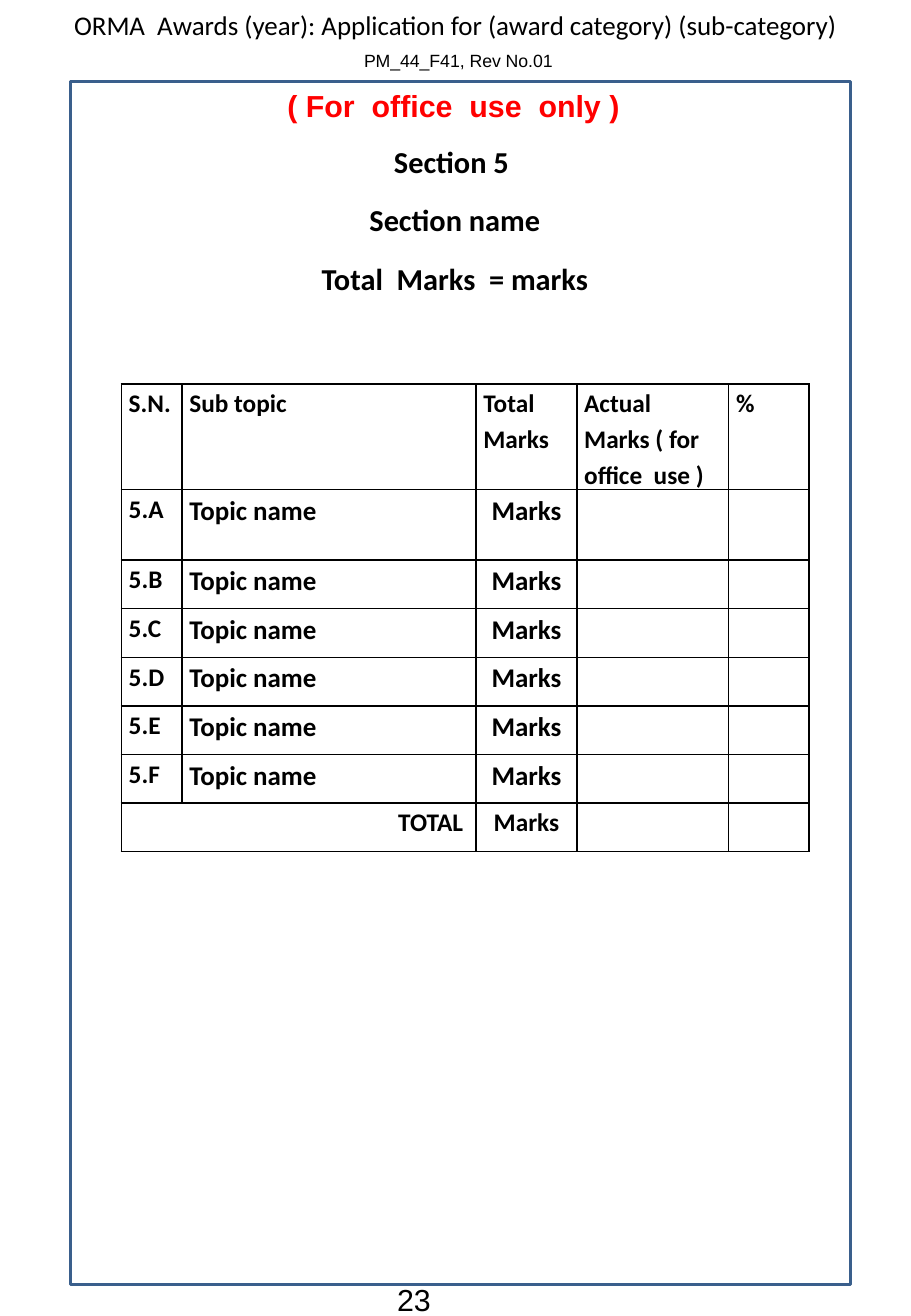
from lxml import etree
from pptx import Presentation
from pptx.dml.color import RGBColor
from pptx.enum.shapes import MSO_SHAPE
from pptx.enum.text import MSO_ANCHOR, MSO_AUTO_SIZE, PP_ALIGN
from pptx.oxml.ns import qn
from pptx.util import Inches, Pt

LEFT, CENTER, RIGHT = PP_ALIGN.LEFT, PP_ALIGN.CENTER, PP_ALIGN.RIGHT
BLACK = RGBColor(0x00, 0x00, 0x00)
RED = RGBColor(0xFF, 0x00, 0x00)
FRAME_BLUE = RGBColor(0x3A, 0x5F, 0x8C)


def add_run(paragraph, text, size, font="Calibri", bold=False, color=BLACK):
    run = paragraph.add_run()
    run.text = text
    run.font.size = Pt(size)
    run.font.name = font
    run.font.bold = bold
    run.font.color.rgb = color


def set_borders(cell):
    """Draw a thin black line on all four sides of a table cell."""
    properties = cell._tc.get_or_add_tcPr()
    for position, side in enumerate(("a:lnL", "a:lnR", "a:lnT", "a:lnB")):
        line = etree.Element(qn(side), w=str(Pt(1)))
        fill = etree.SubElement(line, qn("a:solidFill"))
        etree.SubElement(fill, qn("a:srgbClr"), val=str(BLACK))
        properties.insert(position, line)


presentation = Presentation()
presentation.slide_width = Inches(7.5)
presentation.slide_height = Inches(10.83)
slide = presentation.slides.add_slide(presentation.slide_layouts[5])

# Page number and running header
page_number = slide.shapes.add_textbox(Inches(3.17), Inches(10.49), Inches(1.42), Inches(0.4))
page_number.text_frame.word_wrap = True
add_run(page_number.text_frame.paragraphs[0], "23", 18, "Arial")

header = slide.shapes.add_textbox(Inches(0), Inches(0.02), Inches(7.5), Inches(0.64))
header.text_frame.word_wrap = True
award_line = header.text_frame.paragraphs[0]
award_line.alignment = CENTER
add_run(award_line, "ORMA  Awards (year): Application for (award category) (sub-category)", 16)
form_line = header.text_frame.add_paragraph()
form_line.alignment = CENTER
add_run(form_line, " ", 16)
add_run(form_line, "PM_44_F41, Rev No.01", 10.5, "Arial")

# Section title
title = slide.shapes.title
title.left, title.top = Inches(1.08), Inches(1.08)
title.width, title.height = Inches(5.33), Inches(1.43)
title_frame = title.text_frame
title_frame.word_wrap = True
title_frame.auto_size = MSO_AUTO_SIZE.NONE
title_frame.vertical_anchor = MSO_ANCHOR.TOP
for index, text in enumerate(("Section 5 ", "Section name", "Total  Marks  = marks")):
    paragraph = title_frame.add_paragraph() if index else title_frame.paragraphs[0]
    paragraph.alignment = CENTER
    paragraph.line_spacing = 1.15
    paragraph.space_after = Pt(10)
    add_run(paragraph, text, 18, bold=True)

# Marks table: each cell is text, size, alignment
column_widths = [0.5, 2.42, 0.83, 1.25, 0.66]
row_heights = [0.87, 0.58] + [0.4] * 6
headings = ["S.N.", "Sub topic", "Total Marks", "Actual Marks ( for office  use )", "%"]
empty = ("", 15, LEFT)
rows = [[(heading, 15, LEFT) for heading in headings]]
for letter in "ABCDEF":
    rows.append([(f"5.{letter}", 15, LEFT), ("Topic name", 16, LEFT),
                 ("Marks", 16, CENTER), empty, empty])
rows.append([("TOTAL ", 15, RIGHT), empty, ("Marks", 15, CENTER), empty, empty])

table = slide.shapes.add_table(len(rows), len(column_widths), Inches(1), Inches(3.16),
                               Inches(sum(column_widths)), Inches(sum(row_heights))).table
table.first_row = False
table.horz_banding = False
for column, width in zip(table.columns, column_widths):
    column.width = Inches(width)
for row, height, contents in zip(table.rows, row_heights, rows):
    row.height = Inches(height)
    for cell, (text, size, alignment) in zip(row.cells, contents):
        cell.margin_left = cell.margin_right = Inches(0.06)
        cell.margin_top = cell.margin_bottom = 0
        cell.fill.background()
        set_borders(cell)
        paragraph = cell.text_frame.paragraphs[0]
        paragraph.alignment = alignment
        if text:
            paragraph.line_spacing = 1.15
            paragraph.space_after = Pt(10)
            add_run(paragraph, text, size, bold=True)
        else:
            paragraph.font.size = Pt(size)
total_row = len(rows) - 1
table.cell(total_row, 0).merge(table.cell(total_row, 1))

# Office note and page frame
office_note = slide.shapes.add_textbox(Inches(2.25), Inches(0.67), Inches(2.97), Inches(0.4))
office_note.text_frame.word_wrap = False
note_line = office_note.text_frame.paragraphs[0]
note_line.alignment = CENTER
add_run(note_line, "( For  office  use  only )", 18, "Arial", True, RED)

frame = slide.shapes.add_shape(MSO_SHAPE.RECTANGLE, Inches(0.58), Inches(0.67),
                               Inches(6.42), Inches(9.9))
frame.shadow.inherit = False
frame.fill.background()
frame.line.color.rgb = FRAME_BLUE
frame.line.width = Pt(2)

presentation.save("out.pptx")
